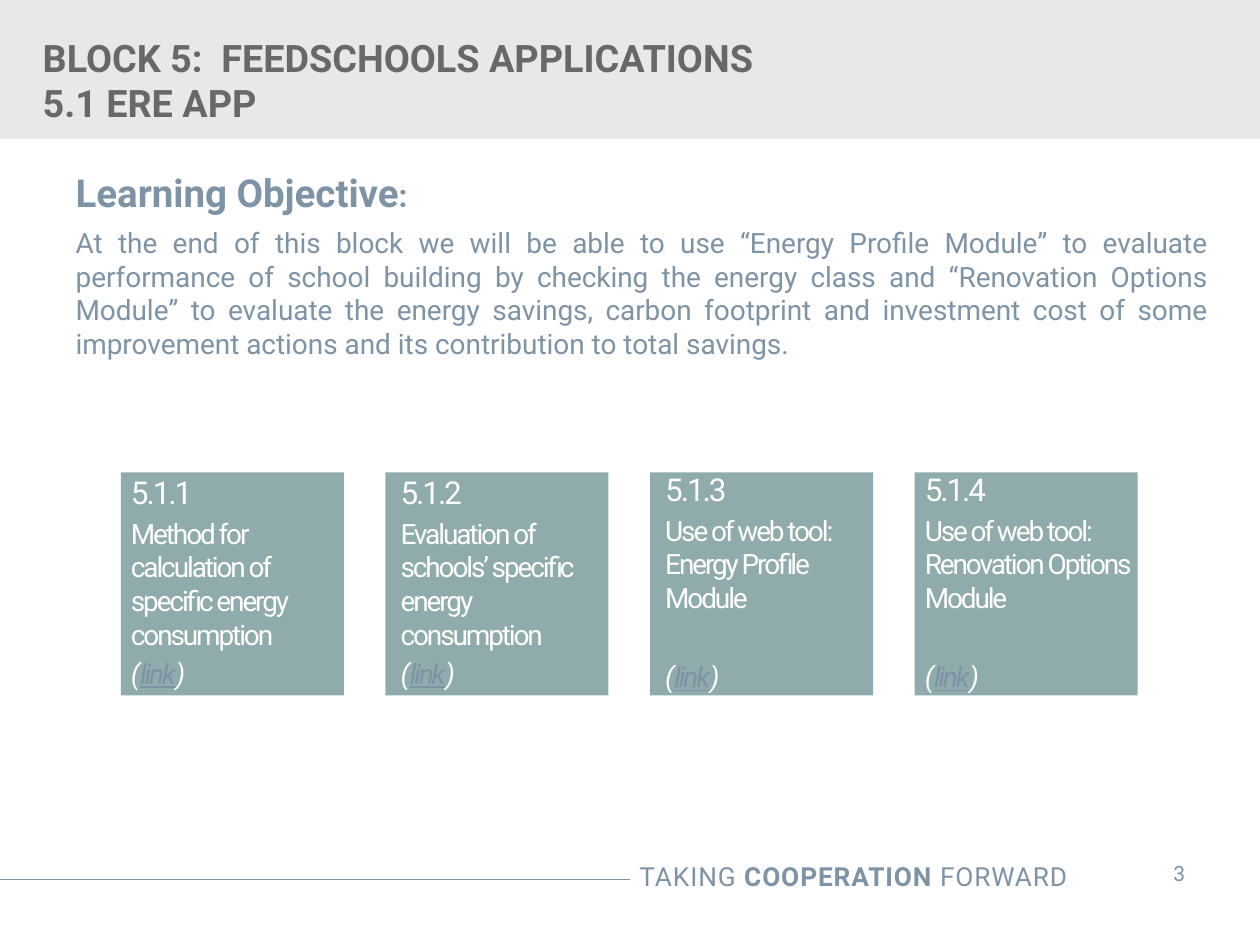
from dataclasses import dataclass
from typing import Any

from lxml.etree import SubElement
from pptx import Presentation
from pptx.dml.color import RGBColor
from pptx.enum.shapes import MSO_CONNECTOR as Connector, MSO_SHAPE as Shape
from pptx.enum.text import MSO_ANCHOR as Anchor, PP_ALIGN as Align
from pptx.oxml.ns import qn
from pptx.util import Inches, Pt

COLORS = {
    "band": "E8E8E8",
    "title": "686868",
    "text": "7E93A5",
    "card": "90ABAB",
    "white": "FFFFFF",
}
FONT = "Roboto"
CARD_LEFT, CARD_TOP, CARD_SIZE, CARD_STEP = 0.96, 3.75, 1.77, 2.1
WIDE_INSETS = (0.12, 0.08, 0.12, 0.12)
TIGHT_INSETS = (0.08, 0.08, 0, 0.12)


@dataclass
class Card:
    """One linked topic of the block."""

    number: str
    topic: str
    insets: tuple[float, float, float, float]
    link_gap: float


CARDS = [
    Card("5.1.1", "Method for calculation of specific energy consumption", TIGHT_INSETS, 3.2),
    Card("5.1.2", "Evaluation of schools’ specific energy consumption", WIDE_INSETS, 3.2),
    Card("5.1.3", "Use of web tool: Energy Profile Module", WIDE_INSETS, 26),
    Card("5.1.4", "Use of web tool: Renovation Options Module", TIGHT_INSETS, 26),
]


def add_span(para: Any, text: str, size: float, color: str = "text", bold: bool = False,
             italic: bool = False, underline: bool = False, spacing: float = 0) -> None:
    """Add one formatted run to a paragraph."""
    span = para.add_run()
    span.text = text
    font = span.font
    font.name, font.size = FONT, Pt(size)
    font.bold, font.italic, font.underline = bold, italic, underline
    font.color.rgb = RGBColor.from_string(COLORS[color])
    if spacing:
        font._element.set("spc", str(round(spacing * 100)))


def set_frame(box: Any, insets: tuple[float, float, float, float], anchor: Anchor) -> Any:
    """Set wrapping, insets and anchor, and return the text frame."""
    frame = box.text_frame
    frame.word_wrap, frame.vertical_anchor = True, anchor
    (frame.margin_left, frame.margin_top,
     frame.margin_right, frame.margin_bottom) = map(Inches, insets)
    return frame


def add_text(page: Any, left: float, top: float, width: float, height: float,
             insets: tuple[float, float, float, float] = (0.1, 0.05, 0.1, 0.05),
             anchor: Anchor = Anchor.TOP) -> Any:
    """Add a text box and return its text frame."""
    box = page.shapes.add_textbox(Inches(left), Inches(top), Inches(width), Inches(height))
    return set_frame(box, insets, anchor)


def add_block(page: Any, left: float, top: float, width: float, height: float,
              color: str) -> Any:
    """Add a plain filled rectangle."""
    block = page.shapes.add_shape(
        Shape.RECTANGLE, Inches(left), Inches(top), Inches(width), Inches(height))
    block.shadow.inherit = False
    block.fill.solid()
    block.fill.fore_color.rgb = RGBColor.from_string(COLORS[color])
    block.line.fill.background()
    return block


def add_card(page: Any, card: Card, left: float) -> None:
    """Add a topic card with its number, topic and link."""
    block = add_block(page, left, CARD_TOP, CARD_SIZE, CARD_SIZE, "card")
    frame = set_frame(block, card.insets, Anchor.MIDDLE)
    number, topic, link = frame.paragraphs[0], frame.add_paragraph(), frame.add_paragraph()
    for para in (number, topic, link):
        para.alignment = Align.LEFT
    topic.space_before, link.space_before = Pt(3.2), Pt(card.link_gap)
    add_span(number, card.number, 18, "white", spacing=-1.2)
    add_span(topic, card.topic, 16, "white", spacing=-1.2)
    add_span(link, "(", 16, "white", italic=True, spacing=-1.2)
    add_span(link, "link", 16, italic=True, underline=True, spacing=-1.2)
    add_span(link, ")", 16, "white", italic=True, spacing=-1.2)


def add_title(page: Any) -> None:
    """Add the header band and the two-line title."""
    add_block(page, 0, 0, 10, 1.1, "band")
    para = add_text(page, 0, 0.26, 7.18, 0.75, anchor=Anchor.MIDDLE).paragraphs[0]
    para._p.get_or_add_pPr().set("marL", str(Inches(0.24)))
    add_span(para, "BLOCK 5:  FEEDSCHOOLS APPLICATIONS", 21.6, "title", bold=True)
    para.add_line_break()
    add_span(para, "5.1 ERE APP", 21.6, "title", bold=True)


def add_objective(page: Any) -> None:
    """Add the learning objective."""
    frame = add_text(page, 0.52, 1.3, 9.15, 1.89, (0.08, 0.04, 0.08, 0.04))
    heading, body = frame.paragraphs[0], frame.add_paragraph()
    add_span(heading, "Learning Objective", 22, bold=True)
    add_span(heading, ":", 18, bold=True)
    body.alignment, body.space_before = Align.JUSTIFY, Pt(6)
    add_span(body, "At the end of this block we will be able to use “Energy Profile Module” "
                   "to evaluate performance of school building by checking the energy class "
                   "and “Renovation Options Module” to evaluate the energy savings, carbon "
                   "footprint and investment cost of some improvement actions and its "
                   "contribution to total savings.", 16)


def add_footer(page: Any) -> None:
    """Add the footer rule, motto and page number."""
    rule = page.shapes.add_connector(
        Connector.STRAIGHT, Inches(0), Inches(6.98), Inches(5), Inches(6.98))
    rule.line.color.rgb = RGBColor.from_string(COLORS["text"])
    rule.line.width = Pt(0.75)
    SubElement(rule._element.spPr, qn("a:effectLst"))
    motto = add_text(page, 3.88, 6.78, 4.69, 0.35).paragraphs[0]
    motto.alignment = Align.RIGHT
    add_span(motto, "TAKING ", 15, spacing=0.5)
    add_span(motto, "COOPERATION", 15, bold=True, spacing=0.5)
    add_span(motto, " FORWARD", 15, spacing=0.5)
    number = add_text(page, 8.99, 6.73, 0.74, 0.4, (0.2, 0.1, 0.2, 0.1)).paragraphs[0]
    number.alignment = Align.CENTER
    add_span(number, "3", 12)


def main() -> None:
    """Build and save the slide."""
    deck = Presentation()
    deck.slide_width, deck.slide_height = Inches(10), Inches(7.5)
    page = deck.slides.add_slide(deck.slide_layouts[6])
    add_title(page)
    add_objective(page)
    for index, card in enumerate(CARDS):
        add_card(page, card, CARD_LEFT + index * CARD_STEP)
    add_footer(page)
    deck.save("out.pptx")


if __name__ == "__main__":
    main()
